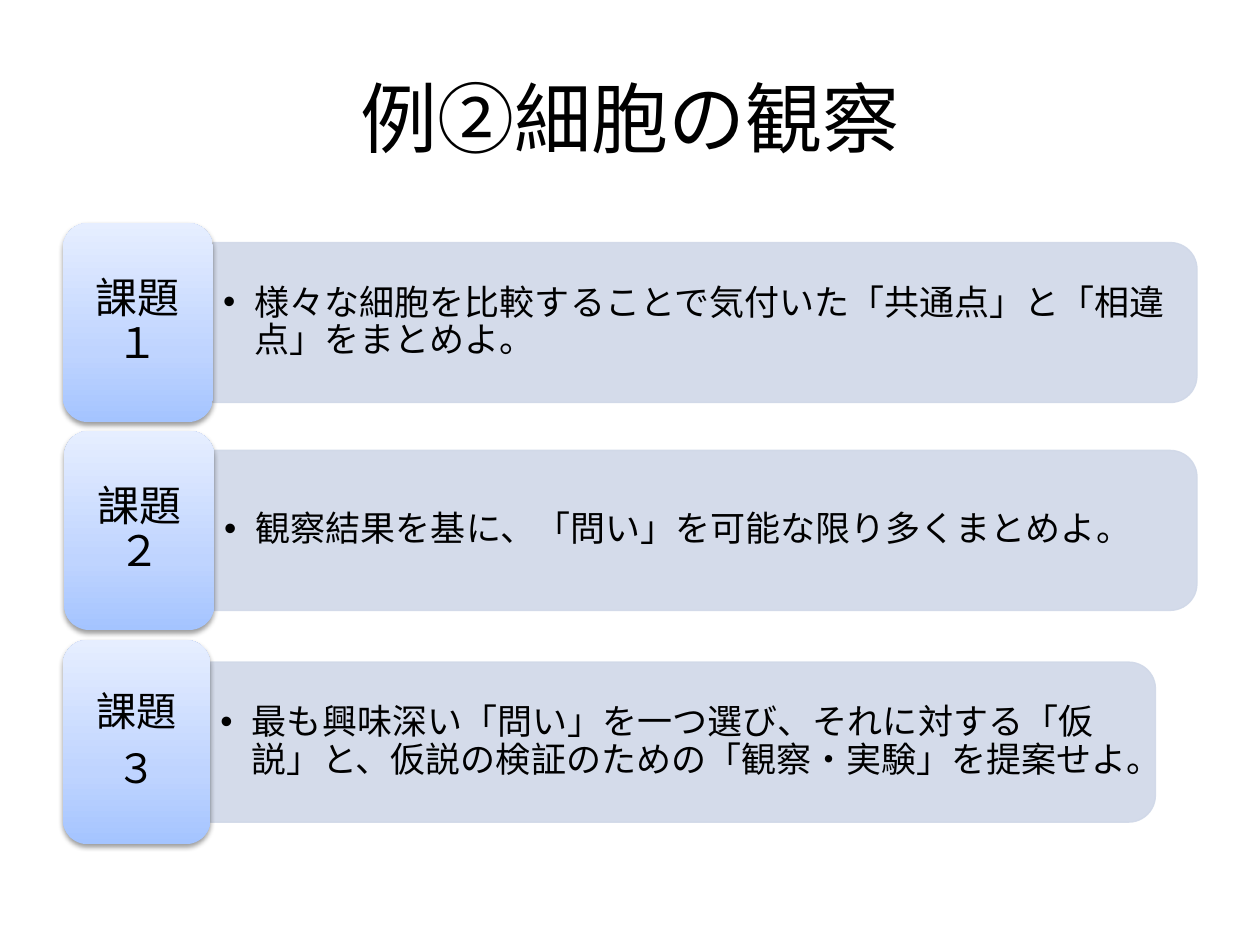
from copy import deepcopy

from lxml.etree import SubElement
from pptx import Presentation
from pptx.dml.color import RGBColor
from pptx.enum.shapes import MSO_SHAPE
from pptx.enum.text import MSO_ANCHOR, PP_ALIGN
from pptx.oxml.ns import qn
from pptx.util import Inches, Pt

BLACK = RGBColor(0x00, 0x00, 0x00)
PANEL = RGBColor(0xD0, 0xD8, 0xE8)
TAB_STOPS = [(0, RGBColor(0xA4, 0xC4, 0xFF)),
             (0.35, RGBColor(0xBF, 0xD4, 0xFF)),
             (1, RGBColor(0xE6, 0xEE, 0xFF))]
FONT = "Cabin"
PANEL_HEIGHT = 1.27

# Box of each row (left, top, width, height), tab width, label lines, label size, task
ROWS = [
    ((0.5, 1.77, 9, 1.58), 1.19, ["課題１"], 24,
     "様々な細胞を比較することで気付いた「共通点」と「相違点」をまとめよ。"),
    ((0.51, 3.42, 8.99, 1.58), 1.19, ["課題２"], 24,
     "観察結果を基に、「問い」を可能な限り多くまとめよ。"),
    ((0.5, 5.08, 8.67, 1.62), 1.17, ["課題", "３"], 23,
     "最も興味深い「問い」を一つ選び、それに対する「仮説」と、"
     "仮説の検証のための「観察・実験」を提案せよ。"),
]


def apply(target, formats):
    for name, value in formats.items():
        setattr(target, name, value)


def inches(*lengths):
    return [Inches(length) for length in lengths]


def write(shape, lines, size, margins, **paragraph_formats):
    """Fill a shape with one formatted paragraph for each line."""
    frame = shape.text_frame
    horizontal, vertical = inches(*margins)
    apply(frame, dict(word_wrap=True, vertical_anchor=MSO_ANCHOR.MIDDLE,
                      margin_left=horizontal, margin_right=horizontal,
                      margin_top=vertical, margin_bottom=vertical))
    frame.text = "\n".join(lines)
    for paragraph in frame.paragraphs:
        apply(paragraph, paragraph_formats)
        for run in paragraph.runs:
            apply(run.font, dict(name=FONT, size=Pt(size)))
            run.font.color.rgb = BLACK
    return frame


def make_translucent(color_format):
    for color in color_format._xPr.iter(qn("a:srgbClr")):
        SubElement(color, qn("a:alpha"), val="90000")


def add_panel(slide, left, top, width, height, task):
    """Panel rounded on its right side, with one bulleted task."""
    # The preset rounds its top corners, so it is turned about its centre
    shape = slide.shapes.add_shape(
        MSO_SHAPE.ROUND_2_SAME_RECTANGLE,
        *inches(left + (width - height) / 2, top + (height - width) / 2, height, width))
    shape.rotation = 90
    shape.shadow.inherit = False
    shape.line.width = Pt(0.75)
    for fill in (shape.fill, shape.line.fill):
        fill.solid()
        fill.fore_color.rgb = PANEL
    for color in shape._element.spPr.iter(qn("a:srgbClr")):
        SubElement(color, qn("a:alpha"), val="90000")

    inset = 0.06
    text = slide.shapes.add_textbox(
        *inches(left, top + inset, width - inset, height - 2 * inset))
    frame = write(text, [task], 20, (0.08, 0.04), line_spacing=0.9)
    properties = frame.paragraphs[0]._p.get_or_add_pPr()
    properties.set("marL", str(Inches(0.25)))
    properties.set("indent", str(-Inches(0.25)))
    SubElement(properties, qn("a:buFont"), typeface="Arial")
    SubElement(properties, qn("a:buChar"), char="•")


def add_tab(slide, left, top, width, height, lines, size):
    """Raised label with a vertical gradient and a soft shadow."""
    shape = slide.shapes.add_shape(
        MSO_SHAPE.ROUNDED_RECTANGLE, *inches(left, top, width, height))
    shape.line.fill.background()
    shape.fill.gradient()
    shape.fill.gradient_angle = 90
    stop_list = shape._element.spPr.find(".//" + qn("a:gsLst"))
    stop_list.append(deepcopy(stop_list[0]))
    for stop, (position, color) in zip(shape.fill.gradient_stops, TAB_STOPS):
        stop.position = position
        stop.color.rgb = color

    shape.shadow.inherit = False
    effects = shape._element.spPr.find(qn("a:effectLst"))
    shadow = SubElement(effects, qn("a:outerShdw"), blurRad=str(Pt(3.1)),
                        dist=str(Pt(1.6)), dir="5400000", rotWithShape="0")
    color = SubElement(shadow, qn("a:srgbClr"), val="000000")
    SubElement(color, qn("a:alpha"), val="38000")

    inset = 0.06
    text = slide.shapes.add_textbox(
        *inches(left + inset, top + inset, width - 2 * inset, height - 2 * inset))
    write(text, lines, size, (0.1, 0.05), alignment=PP_ALIGN.CENTER,
          line_spacing=0.9, space_after=Pt(0.35 * size))


def add_row(slide, box, tab_width, lines, size, task):
    """Tab at the left of the box, panel centred beside it."""
    left, top, width, height = box
    add_panel(slide, left + tab_width, top + (height - PANEL_HEIGHT) / 2,
              width - tab_width, PANEL_HEIGHT, task)
    add_tab(slide, left, top, tab_width, height, lines, size)


def add_title(slide, left, top, width, height):
    title = slide.shapes.title
    apply(title, dict(zip(("left", "top", "width", "height"),
                          inches(left, top, width, height))))
    write(title, ["例②細胞の観察"], 44, (0.1, 0.05), alignment=PP_ALIGN.CENTER)


def main():
    presentation = Presentation()
    apply(presentation, dict(slide_width=Inches(10), slide_height=Inches(7.5)))
    slide = presentation.slides.add_slide(presentation.slide_layouts[5])
    add_title(slide, 0.5, 0.3, 9, 1.25)
    for row in ROWS:
        add_row(slide, *row)
    presentation.save("out.pptx")


if __name__ == "__main__":
    main()
